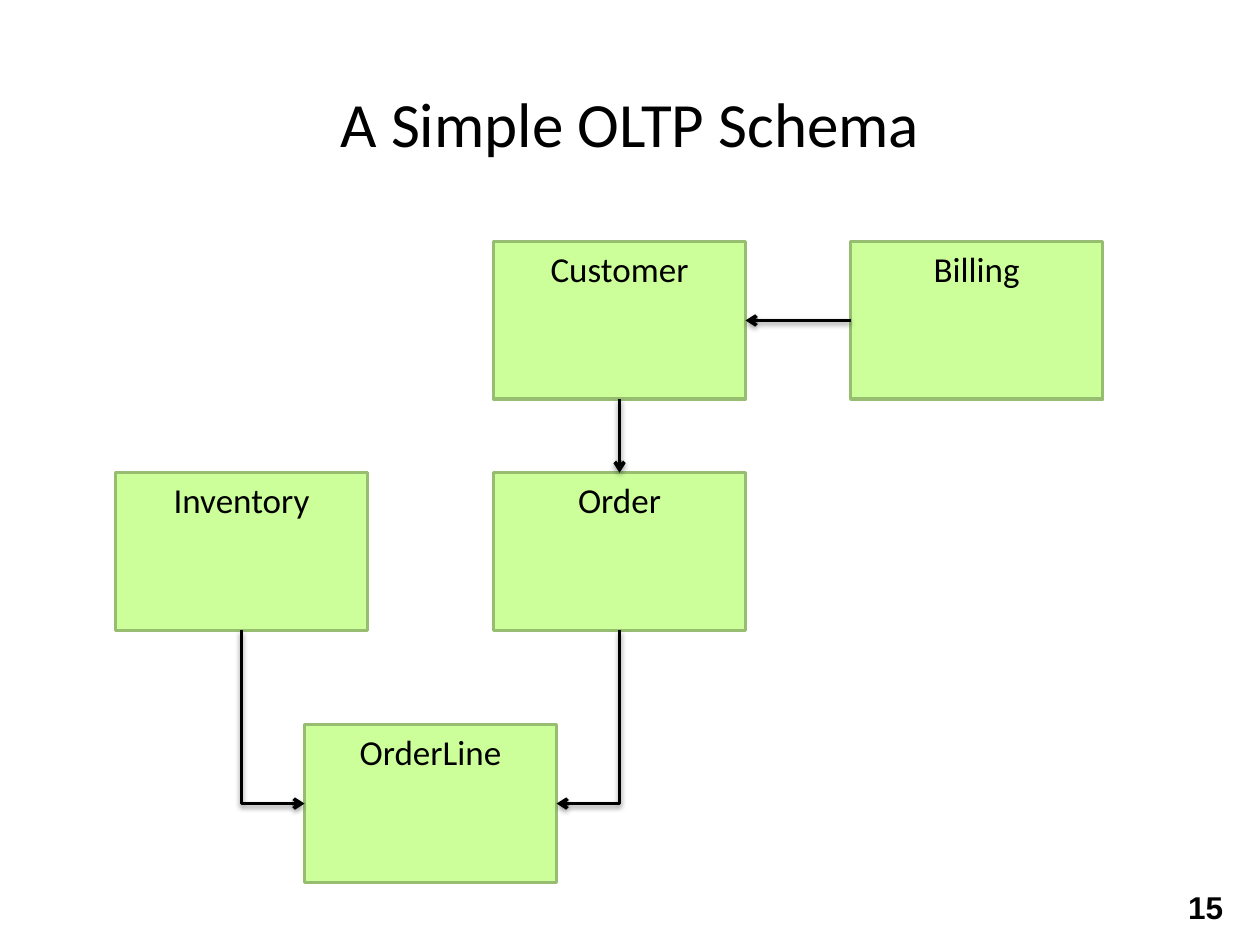
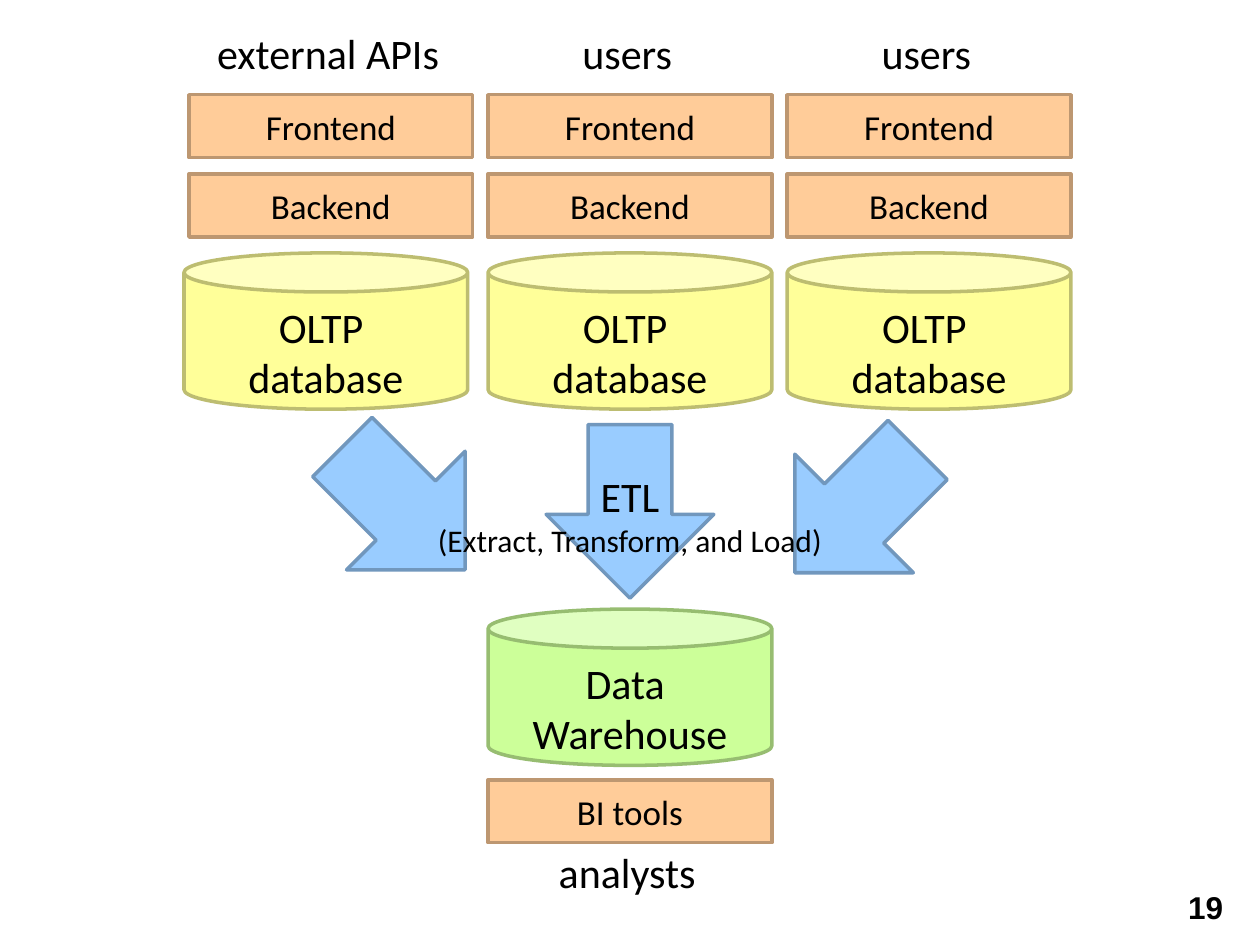
"""Build two slides on OLTP schemas and data warehouse architecture."""
from lxml import etree
from pptx import Presentation
from pptx.dml.color import RGBColor
from pptx.enum.shapes import MSO_CONNECTOR, MSO_SHAPE
from pptx.enum.text import MSO_ANCHOR, PP_ALIGN
from pptx.oxml.ns import qn
from pptx.util import Cm, Pt

RECTANGLE, CAN, DOWN_ARROW = MSO_SHAPE.RECTANGLE, MSO_SHAPE.CAN, MSO_SHAPE.DOWN_ARROW
STRAIGHT, ELBOW = MSO_CONNECTOR.STRAIGHT, MSO_CONNECTOR.ELBOW
CENTER, LEFT = PP_ALIGN.CENTER, PP_ALIGN.LEFT
TOP, MIDDLE = MSO_ANCHOR.TOP, MSO_ANCHOR.MIDDLE
TOP_SIDE, LEFT_SIDE, BOTTOM_SIDE, RIGHT_SIDE = range(4)
TITLE_ONLY, BLANK = 5, 6

BLACK = "000000"
GREEN = ("CCFF99", "97BD71")
ORANGE = ("FFCC99", "BD9771")
YELLOW = ("FFFF99", "BDBD71")
BLUE = ("99CCFF", "7197BD")

TABLE_WIDTH, TABLE_HEIGHT = 5.08, 3.18
TIER_WIDTH, TIER_HEIGHT, CAN_HEIGHT = 5.72, 1.27, 3.15
STACK_LEFT, STACK_STEP = 3.81, 6.03
ARROW_WIDTH, ARROW_HEIGHT = 3.38, 3.5


def color(value):
    """Turn a hex string into a colour."""
    return RGBColor.from_string(value)


def write(frame, text, size, font="Calibri", align=CENTER, anchor=TOP, bold=False):
    """Fill a text frame with one formatted paragraph and return it."""
    frame.word_wrap = True
    frame.vertical_anchor = anchor
    para = frame.paragraphs[0]
    para.text = text
    para.alignment = align
    para.font.name = font
    para.font.size = Pt(size)
    para.font.bold = bold
    para.font.color.rgb = color(BLACK)
    return para


def add_label(page, text, left, top, width, height, size=24, **style):
    """Add a text box and return its paragraph."""
    box = page.shapes.add_textbox(Cm(left), Cm(top), Cm(width), Cm(height))
    return write(box.text_frame, text, size, **style)


def add_block(page, kind, colors, left, top, width, height):
    """Add a filled and outlined shape."""
    block = page.shapes.add_shape(kind, Cm(left), Cm(top), Cm(width), Cm(height))
    block.shadow.inherit = False
    fill, line = colors
    block.fill.solid()
    block.fill.fore_color.rgb = color(fill)
    block.line.color.rgb = color(line)
    block.line.width = Pt(2)
    return block


def add_title(page, text):
    """Place and format the title placeholder."""
    title = page.shapes.title
    title.left, title.top, title.width, title.height = Cm(0), Cm(1.52), Cm(25.4), Cm(1.91)
    write(title.text_frame, text, 36, anchor=MIDDLE)


def add_page_number(page, number):
    """Add the page number in the bottom right corner."""
    add_label(page, str(number), 23.7, 17.78, 1.47, 1.02, 18,
              font="Arial", align=LEFT, bold=True)


def add_table_box(page, name, left, top):
    """Add a database table drawn as a named rectangle."""
    block = add_block(page, RECTANGLE, GREEN, left, top, TABLE_WIDTH, TABLE_HEIGHT)
    write(block.text_frame, name, 20)
    return block


def add_tier(page, name, left, top):
    """Add an application tier."""
    block = add_block(page, RECTANGLE, ORANGE, left, top, TIER_WIDTH, TIER_HEIGHT)
    write(block.text_frame, name, 20, anchor=MIDDLE)


def add_database(page, name, colors, left, top):
    """Add a cylinder with its name in the lower part."""
    add_block(page, CAN, colors, left, top, TIER_WIDTH, CAN_HEIGHT)
    add_label(page, name, left, top + 0.85, TIER_WIDTH, 2.3)


def add_flow_arrow(page, left, top, angle):
    """Add a block arrow turned by an angle."""
    arrow = add_block(page, DOWN_ARROW, BLUE, left, top, ARROW_WIDTH, ARROW_HEIGHT)
    arrow.rotation = angle


def add_link(page, kind, source, source_side, target, target_side):
    """Connect two shapes with a softly shadowed arrow."""
    link = page.shapes.add_connector(kind, 0, 0, 0, 0)
    link.begin_connect(source, source_side)
    link.end_connect(target, target_side)
    link.line.color.rgb = color(BLACK)
    link.line.width = Pt(2)
    properties = link._element.spPr
    etree.SubElement(properties.find(qn("a:ln")), qn("a:tailEnd"), type="arrow")
    effects = etree.SubElement(properties, qn("a:effectLst"))
    shadow = etree.SubElement(effects, qn("a:outerShdw"), blurRad=str(Pt(3.1)),
                              dist=str(Pt(1.6)), dir="5400000", rotWithShape="0")
    shade = etree.SubElement(shadow, qn("a:srgbClr"), val=BLACK)
    etree.SubElement(shade, qn("a:alpha"), val="38000")
    return link


def add_corner_link(page, source, target, target_side):
    """Connect downwards from a shape and then sideways into another."""
    link = add_link(page, ELBOW, source, BOTTOM_SIDE, target, target_side)
    goes_right = link.end_x > link.begin_x
    left, top, across, drop = link.left, link.top, link.width, link.height
    link.left, link.top = left + (across - drop) // 2, top + (drop - across) // 2
    link.width, link.height = drop, across
    properties = link._element.spPr
    properties.find(qn("a:prstGeom")).set("prst", "bentConnector2")
    frame = properties.find(qn("a:xfrm"))
    frame.set("rot", str((270 if goes_right else 90) * 60000))
    frame.set("flipH", "1" if goes_right else "0")


def build_schema(deck):
    """Build the slide with the table schema."""
    page = deck.slides.add_slide(deck.slide_layouts[TITLE_ONLY])
    add_title(page, "A Simple OLTP Schema")
    customer = add_table_box(page, "Customer", 9.95, 4.87)
    billing = add_table_box(page, "Billing", 17.15, 4.87)
    order = add_table_box(page, "Order", 9.95, 9.53)
    inventory = add_table_box(page, "Inventory", 2.33, 9.53)
    order_line = add_table_box(page, "OrderLine", 6.14, 14.61)
    add_link(page, STRAIGHT, customer, BOTTOM_SIDE, order, TOP_SIDE)
    add_link(page, STRAIGHT, billing, LEFT_SIDE, customer, RIGHT_SIDE)
    add_corner_link(page, inventory, order_line, LEFT_SIDE)
    add_corner_link(page, order, order_line, RIGHT_SIDE)
    add_page_number(page, 15)


def build_architecture(deck):
    """Build the slide with the route from OLTP databases to the warehouse."""
    page = deck.slides.add_slide(deck.slide_layouts[BLANK])
    for column, audience in enumerate(("external APIs", "users", "users")):
        left = STACK_LEFT + column * STACK_STEP
        add_label(page, audience, left, 0.43, 5.61, 1.27)
        add_tier(page, "Frontend", left, 1.91)
        add_tier(page, "Backend", left, 3.51)
        can_left = left - 0.1 if column == 0 else left
        add_database(page, "OLTP \vdatabase", YELLOW, can_left, 5.1)
    for left, top, angle in ((6.45, 8.5, 315), (11.01, 8.56, 0), (15.57, 8.56, 45)):
        add_flow_arrow(page, left, top, angle)
    etl = add_label(page, "ETL\v(Extract, Transform, and Load)", 7.62, 9.37, 10.16, 2.06)
    etl.runs[1].font.size = Pt(18)
    middle = STACK_LEFT + STACK_STEP
    add_database(page, "Data \vWarehouse", GREEN, middle, 12.28)
    add_tier(page, "BI tools", middle, 15.72)
    add_label(page, "analysts", middle, 16.94, 5.61, 1.27)
    add_page_number(page, 19)


def main():
    """Build and save the deck."""
    deck = Presentation()
    deck.slide_width, deck.slide_height = Cm(25.4), Cm(19.05)
    build_schema(deck)
    build_architecture(deck)
    deck.save("out.pptx")


if __name__ == "__main__":
    main()
